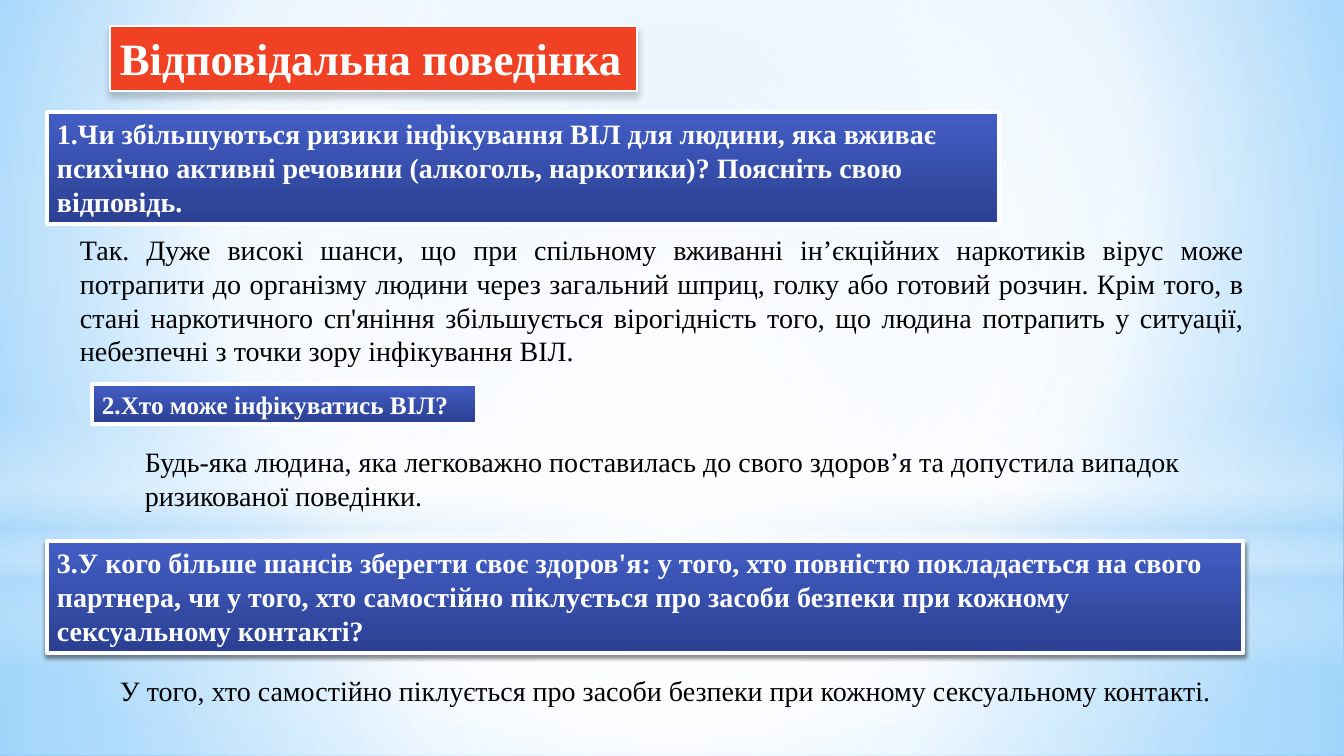
from lxml import etree
from pptx import Presentation
from pptx.dml.color import RGBColor
from pptx.enum.shapes import MSO_SHAPE
from pptx.enum.text import MSO_ANCHOR, MSO_AUTO_SIZE, PP_ALIGN
from pptx.oxml.ns import qn
from pptx.util import Emu, Pt

RECTANGLE, OVAL = MSO_SHAPE.RECTANGLE, MSO_SHAPE.OVAL
LEFT, JUSTIFY = PP_ALIGN.LEFT, PP_ALIGN.JUSTIFY
TOP = MSO_ANCHOR.TOP
GROW = MSO_AUTO_SIZE.SHAPE_TO_FIT_TEXT

WHITE = RGBColor(0xFF, 0xFF, 0xFF)
BLACK = RGBColor(0x00, 0x00, 0x00)
RED = RGBColor(0xF1, 0x41, 0x24)
SKY = RGBColor(0x9E, 0xD5, 0xFF)
DEEP_SKY = RGBColor(0x5B, 0xB9, 0xFF)
PALE_SKY = RGBColor(0xB4, 0xDC, 0xFA)
INDIGO = RGBColor(0x43, 0x5E, 0xC5)
NAVY = RGBColor(0x2B, 0x40, 0x92)

FONT = "Times New Roman"
WIDTH, HEIGHT = 1344, 756
EMU_PER_PX = 914400 / 100.8
CENTER = (50, 50, 50, 50)

BACKDROP = [(0, SKY, 100), (60, WHITE, 100), (100, DEEP_SKY, 100)]
BACKDROP_FOCUS = (20, 10, 20, 60)
QUESTION_FILL = [(0, INDIGO, 100), (100, NAVY, 100)]

GLOWS = [
    (RECTANGLE, (0, 562, WIDTH, 194), CENTER,
     [(0, WHITE, 91), (37, WHITE, 76), (100, PALE_SKY, 79)]),
    (RECTANGLE, (0, 0, WIDTH, 562), CENTER,
     [(0, WHITE, 89), (48, WHITE, 62), (100, PALE_SKY, 79)]),
    (RECTANGLE, (0, 415, WIDTH, 252), None,
     [(0, WHITE, 0), (29, WHITE, 30), (45, PALE_SKY, 40),
      (55, WHITE, 26), (65, PALE_SKY, 60), (100, WHITE, 0)]),
    (OVAL, (0, 176, WIDTH, 562), CENTER,
     [(0, WHITE, 100), (56, WHITE, 0)]),
]

TITLE = ("Відповідальна поведінка", (110, 26, 527, 65))
TITLE_SHADOW = (20, 5, 4)

QUESTIONS = [
    ("1.Чи збільшуються ризики інфікування ВІЛ для людини, яка вживає психічно "
     "активні речовини (алкоголь, наркотики)? Поясніть свою відповідь.",
     (47, 112, 952, 112), 20, None),
    ("2.Хто може інфікуватись ВІЛ?", (92, 384, 385, 40), 18, None),
    ("3.У кого більше шансів зберегти своє здоров'я: у того, хто повністю "
     "покладається на свого партнера, чи у того, хто самостійно піклується про "
     "засоби безпеки при кожному сексуальному контакті?",
     (47, 541, 1196, 112), 20, (45, 3.1, 1.8)),
]

ANSWERS = [
    ("Так. Дуже високі шанси, що при спільному вживанні ін’єкційних наркотиків "
     "вірус може потрапити до організму людини через загальний шприц, голку або "
     "готовий розчин. Крім того, в стані наркотичного сп'яніння збільшується "
     "вірогідність того, що людина потрапить у ситуації, небезпечні з точки зору "
     "інфікування ВІЛ.", (70, 228, 1184, 146), JUSTIFY),
    ("Будь-яка людина, яка легковажно поставилась до свого здоров’я та допустила "
     "випадок ризикованої поведінки.", (135, 440, 1179, 78), LEFT),
    ("У того, хто самостійно піклується про засоби безпеки при кожному "
     "сексуальному контакті.", (110, 669, 1234, 44), LEFT),
]


def px(length):
    return Emu(round(length * EMU_PER_PX))


def add_color(parent, color, opacity):
    tint = etree.SubElement(parent, qn("a:srgbClr"), val=str(color))
    if opacity < 100:
        etree.SubElement(tint, qn("a:alpha"), val=str(opacity * 1000))


def paint_gradient(fill, holder, stops, focus=None):
    fill.background()
    gradient = etree.Element(qn("a:gradFill"), rotWithShape="1")
    stop_list = etree.SubElement(gradient, qn("a:gsLst"))
    for position, color, opacity in stops:
        stop = etree.SubElement(stop_list, qn("a:gs"), pos=str(position * 1000))
        add_color(stop, color, opacity)
    if focus:
        path = etree.SubElement(gradient, qn("a:path"), path="circle")
        sides = {side: str(part * 1000) for side, part in zip("ltrb", focus)}
        etree.SubElement(path, qn("a:fillToRect"), **sides)
    else:
        etree.SubElement(gradient, qn("a:lin"), ang="5400000", scaled="0")
    holder.replace(holder.find(qn("a:noFill")), gradient)


def add_shadow(shape, opacity, blur, distance):
    effects = shape.element.spPr.find(qn("a:effectLst"))
    shadow = etree.SubElement(
        effects, qn("a:outerShdw"), blurRad=str(Pt(blur)), dist=str(Pt(distance)),
        dir="5400000", algn="ctr", rotWithShape="0")
    add_color(shadow, BLACK, opacity)


def add_box(page, kind, frame):
    box = page.shapes.add_shape(kind, *map(px, frame))
    box.shadow.inherit = False
    box.line.fill.background()
    return box


def outline(box, points):
    box.line.color.rgb = WHITE
    box.line.width = Pt(points)


def write(box, text, size, color, bold=False, align=LEFT, wrap=True):
    frame = box.text_frame
    frame.word_wrap = wrap
    frame.auto_size = GROW
    frame.vertical_anchor = TOP
    para = frame.paragraphs[0]
    para.text = text
    para.alignment = align
    para.font.name = FONT
    para.font.size = Pt(size)
    para.font.bold = bold
    para.font.color.rgb = color


def main():
    deck = Presentation()
    deck.slide_width, deck.slide_height = px(WIDTH), px(HEIGHT)
    page = deck.slides.add_slide(deck.slide_layouts[6])

    backdrop = page.background.fill
    holder = page.element.find(".//" + qn("p:bgPr"))
    paint_gradient(backdrop, holder, BACKDROP, BACKDROP_FOCUS)

    for kind, frame, focus, stops in GLOWS:
        glow = add_box(page, kind, frame)
        paint_gradient(glow.fill, glow.element.spPr, stops, focus)

    text, frame = TITLE
    title = add_box(page, RECTANGLE, frame)
    title.fill.solid()
    title.fill.fore_color.rgb = RED
    outline(title, 2)
    add_shadow(title, *TITLE_SHADOW)
    write(title, text, 32, WHITE, bold=True, wrap=False)

    for text, frame, size, shadow in QUESTIONS:
        question = add_box(page, RECTANGLE, frame)
        paint_gradient(question.fill, question.element.spPr, QUESTION_FILL)
        outline(question, 3)
        if shadow:
            add_shadow(question, *shadow)
        write(question, text, size, WHITE, bold=True)

    for text, frame, align in ANSWERS:
        answer = page.shapes.add_textbox(*map(px, frame))
        write(answer, text, 20, BLACK, align=align)

    deck.save("out.pptx")


if __name__ == "__main__":
    main()
